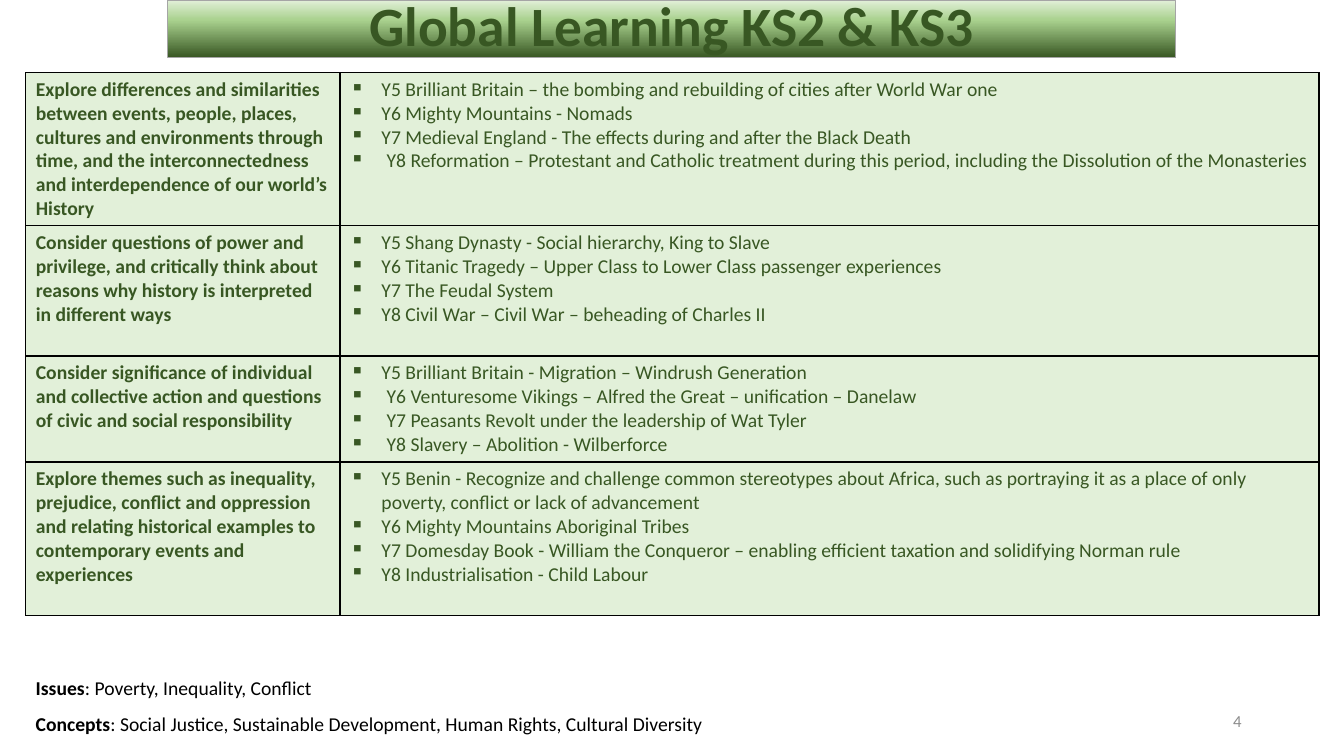
import copy

import pptx
import pptx.dml.color
import pptx.enum.shapes
import pptx.enum.text
import pptx.oxml
import pptx.oxml.ns
import pptx.util

Cm = pptx.util.Cm
Pt = pptx.util.Pt
RGBColor = pptx.dml.color.RGBColor
Align = pptx.enum.text.PP_ALIGN
Anchor = pptx.enum.text.MSO_ANCHOR
qn = pptx.oxml.ns.qn
NAMESPACE = pptx.oxml.ns.nsdecls("a")

PALE_GREEN = RGBColor(0xE2, 0xF0, 0xD9)
MID_GREEN = RGBColor(0xA9, 0xD1, 0x8E)
DARK_GREEN = RGBColor(0x38, 0x57, 0x23)
BORDER_GREY = RGBColor(0xA5, 0xA5, 0xA5)
NUMBER_GREY = RGBColor(0x8C, 0x8C, 0x8C)
BLACK = RGBColor(0, 0, 0)

COLUMN_WIDTHS = [7.92, 24.67]
ROW_HEIGHTS = [3.86, 3.28, 2.67, 3.86]
BULLET_INDENT = 0.79
WIDE_INDENT = 0.92

# Each row: aim, examples, positions of the examples set slightly further in
ROWS = [
    ("Explore differences and similarities between events, people, places, cultures and "
     "environments through time, and the interconnectedness and interdependence of our "
     "world’s History",
     ["Y5 Brilliant Britain – the bombing and rebuilding of cities after World War one",
      "Y6 Mighty Mountains - Nomads",
      "Y7 Medieval England - The effects during and after the Black Death",
      "Y8 Reformation – Protestant and Catholic treatment during this period, including "
      "the Dissolution of the Monasteries"], {3}),
    ("Consider questions of power and privilege, and critically think about reasons why "
     "history is interpreted in different ways",
     ["Y5 Shang Dynasty - Social hierarchy, King to Slave",
      "Y6 Titanic Tragedy – Upper Class to Lower Class passenger experiences",
      "Y7 The Feudal System",
      "Y8 Civil War – Civil War – beheading of Charles II"], set()),
    ("Consider significance of individual and collective action and questions of civic "
     "and social responsibility",
     ["Y5 Brilliant Britain - Migration – Windrush Generation",
      "Y6 Venturesome Vikings – Alfred the Great – unification – Danelaw",
      "Y7 Peasants Revolt under the leadership of Wat Tyler",
      "Y8 Slavery – Abolition - Wilberforce"], {1, 2, 3}),
    ("Explore themes such as inequality, prejudice, conflict and oppression and relating "
     "historical examples to contemporary events and experiences",
     ["Y5 Benin - Recognize and challenge common stereotypes about Africa, such as "
      "portraying it as a place of only poverty, conflict or lack of advancement",
      "Y6 Mighty Mountains Aboriginal Tribes",
      "Y7 Domesday Book - William the Conqueror – enabling efficient taxation and "
      "solidifying Norman rule",
      "Y8 Industrialisation - Child Labour"], set()),
]

FOOTERS = [
    ("Issues", ": Poverty, Inequality, Conflict"),
    ("Concepts", ": Social Justice, Sustainable Development, Human Rights, "
                 "Cultural Diversity"),
]


def write(para, text, size=14, color=DARK_GREEN, bold=False, align=None, indent=None,
          spacing=None):
    """Add a formatted span to a paragraph; an indent in cm makes it a bullet."""
    span = para.add_run()
    span.text = text
    span.font.name = "Calibri"
    span.font.size = Pt(size)
    span.font.bold = bold
    span.font.color.rgb = color
    if align is not None:
        para.alignment = align
    if spacing is not None:
        para.line_spacing = spacing
    if indent is not None:
        properties = para._p.get_or_add_pPr()
        properties.set("marL", str(Cm(indent)))
        properties.set("indent", str(-Cm(indent)))
        properties.append(pptx.oxml.parse_xml(f'<a:buChar {NAMESPACE} char="▪"/>'))


class Page:
    def __init__(self, deck):
        self.shapes = deck.slides.add_slide(deck.slide_layouts[6]).shapes

    def banner(self, text, left, top, width, height):
        shape = self.shapes.add_shape(pptx.enum.shapes.MSO_SHAPE.RECTANGLE,
                                      Cm(left), Cm(top), Cm(width), Cm(height))
        shape.shadow.inherit = False
        shape.line.color.rgb = BORDER_GREY
        shape.line.width = Pt(0.5)
        shape.fill.gradient()
        shape.fill.gradient_angle = 270
        stop_list = next(shape._element.spPr.iter(qn("a:gsLst")))
        stop_list.append(copy.deepcopy(stop_list[-1]))
        stops = zip(shape.fill.gradient_stops, (0, 0.35, 1),
                    (PALE_GREEN, MID_GREEN, DARK_GREEN))
        for stop, position, color in stops:
            stop.position = position
            stop.color.rgb = color
        frame = shape.text_frame
        frame.vertical_anchor = Anchor.MIDDLE
        frame.margin_top = frame.margin_bottom = 0
        write(frame.paragraphs[0], text, size=39.6, bold=True, align=Align.CENTER,
              spacing=0.9)

    def text_box(self, left, top, width, height, anchor=Anchor.TOP):
        """Add an empty text box and return its first paragraph."""
        box = self.shapes.add_textbox(Cm(left), Cm(top), Cm(width), Cm(height))
        box.text_frame.word_wrap = True
        box.text_frame.vertical_anchor = anchor
        return box.text_frame.paragraphs[0]

    def table(self, rows, left, top):
        table = self.shapes.add_table(
            len(rows), len(COLUMN_WIDTHS), Cm(left), Cm(top),
            Cm(sum(COLUMN_WIDTHS)), Cm(sum(ROW_HEIGHTS))).table
        table.first_row = table.horz_banding = False
        for column, width in zip(table.columns, COLUMN_WIDTHS):
            column.width = Cm(width)
        for row, height in zip(table.rows, ROW_HEIGHTS):
            row.height = Cm(height)
        for cell in table.iter_cells():
            self.style_cell(cell)
        for row, (aim, examples, wide) in zip(table.rows, rows):
            aim_cell, example_cell = row.cells
            write(aim_cell.text_frame.paragraphs[0], aim, bold=True)
            frame = example_cell.text_frame
            for index, example in enumerate(examples):
                para = frame.add_paragraph() if index else frame.paragraphs[0]
                write(para, example,
                      indent=WIDE_INDENT if index in wide else BULLET_INDENT)

    def style_cell(self, cell):
        properties = cell._tc.get_or_add_tcPr()
        for side in "LRTB":
            properties.append(pptx.oxml.parse_xml(
                f'<a:ln{side} {NAMESPACE} w="{Pt(1)}"><a:solidFill>'
                f'<a:srgbClr val="{BLACK}"/></a:solidFill></a:ln{side}>'))
        cell.fill.solid()
        cell.fill.fore_color.rgb = PALE_GREEN


def main():
    deck = pptx.Presentation()
    deck.slide_width = Cm(33.87)
    deck.slide_height = Cm(19.05)
    page = Page(deck)
    page.banner("Global Learning KS2 & KS3", 4.23, 0, 25.4, 1.45)
    number = page.text_box(23.92, 17.66, 7.62, 1.01, Anchor.MIDDLE)
    write(number, "4", size=12, color=NUMBER_GREY, align=Align.RIGHT)
    page.table(ROWS, 0.65, 1.83)
    for index, (label, topics) in enumerate(FOOTERS):
        para = page.text_box(0.65, 16.91 + 0.9 * index, sum(COLUMN_WIDTHS), 0.86)
        write(para, label, color=BLACK, bold=True)
        write(para, topics, color=BLACK)
    deck.save("out.pptx")


if __name__ == "__main__":
    main()
